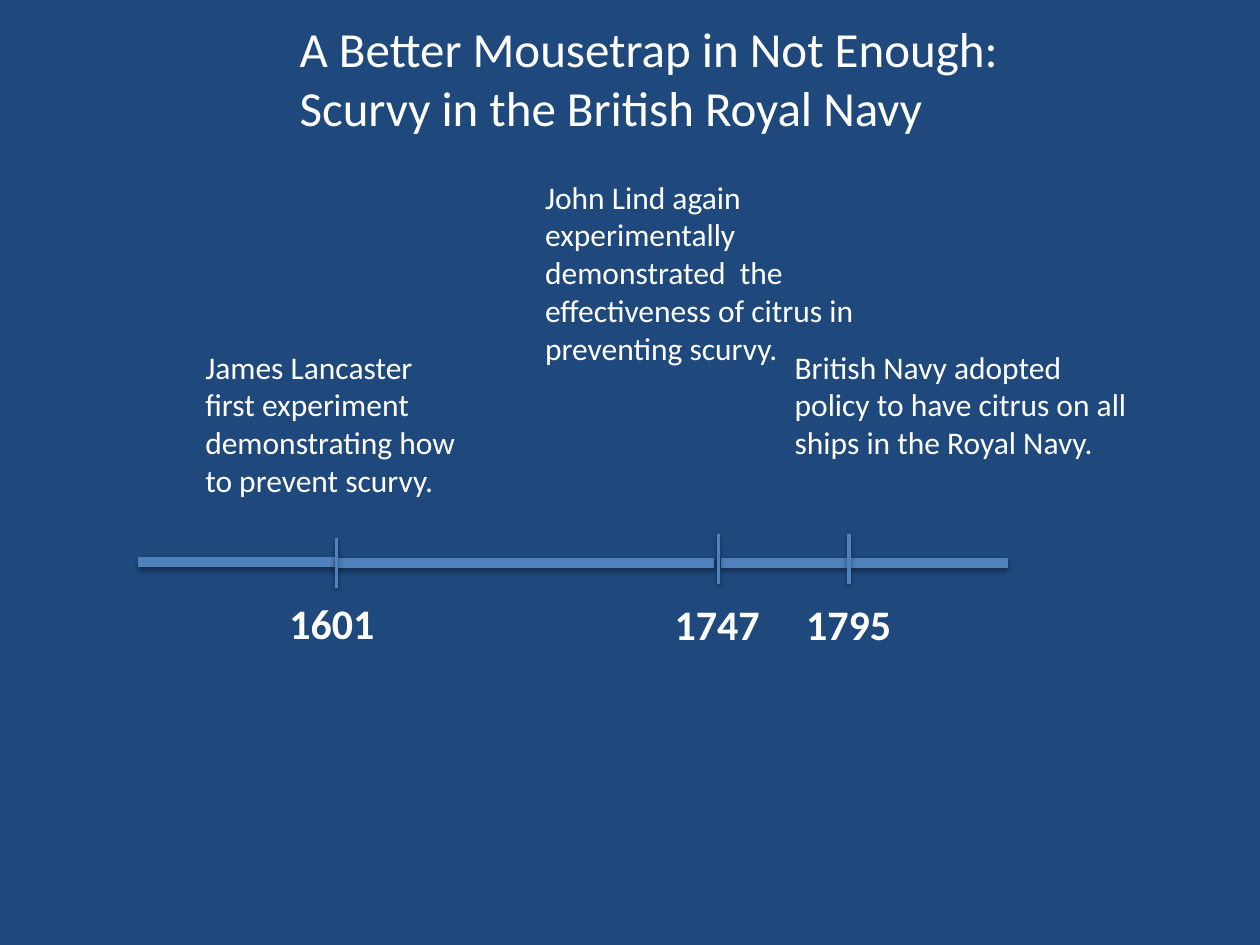
from dataclasses import dataclass

from lxml.etree import SubElement
from pptx import Presentation
from pptx.dml.color import RGBColor
from pptx.enum.shapes import MSO_CONNECTOR
from pptx.enum.text import MSO_ANCHOR, MSO_AUTO_SIZE, PP_ALIGN
from pptx.oxml.ns import qn
from pptx.shapes.base import BaseShape
from pptx.slide import Slide
from pptx.util import Cm, Pt


@dataclass(frozen=True)
class Theme:
    background: RGBColor = RGBColor(0x1F, 0x49, 0x7D)
    axis: RGBColor = RGBColor(0x4F, 0x81, 0xBD)
    text: RGBColor = RGBColor(0xFF, 0xFF, 0xFF)
    font: str = "Calibri"
    title_size: Pt = Pt(28)
    event_size: Pt = Pt(18)
    year_size: Pt = Pt(24)
    axis_width: Pt = Pt(6)
    tick_width: Pt = Pt(2)


@dataclass(frozen=True)
class Area:
    """A rectangle in centimetres."""
    left: float
    top: float
    width: float
    height: float


@dataclass(frozen=True)
class Event:
    year: str
    description: str
    tick_x: float
    tick_top: float
    description_area: Area
    year_area: Area


THEME = Theme()
TITLE = "A Better Mousetrap in Not Enough:\nScurvy in the British Royal Navy"
TITLE_AREA = Area(5.79, 0.25, 14.78, 2.64)
TICK_HEIGHT = 1.0

# Start x, end x and height of each piece of the time axis
AXIS_SEGMENTS = [
    (2.79, 6.78, 11.33),
    (6.78, 14.4, 11.35),
    (14.53, 17.07, 11.35),
    (17.12, 20.32, 11.35),
]

EVENTS = [
    Event("1601",
          "James Lancaster first experiment demonstrating how to prevent scurvy.",
          6.78, 10.85, Area(3.89, 6.88, 5.64, 3.33), Area(5.23, 11.91, 2.92, 2.31)),
    Event("1747",
          "John Lind again experimentally  demonstrated  the effectiveness of "
          "citrus in preventing scurvy.",
          14.48, 10.77, Area(10.74, 3.45, 7.44, 4.11), Area(13.0, 11.94, 2.92, 1.27)),
    Event("1795",
          "British Navy adopted policy to have citrus on all ships in the Royal Navy.",
          17.11, 10.77, Area(15.77, 6.88, 7.44, 2.57), Area(15.65, 11.94, 2.92, 1.27)),
]


def add_line(page: Slide, start: tuple[float, float], end: tuple[float, float],
             width: Pt) -> None:
    """Draw an axis-coloured line with a soft shadow below it."""
    line = page.shapes.add_connector(
        MSO_CONNECTOR.STRAIGHT, *(Cm(value) for value in (*start, *end)))
    line.line.color.rgb = THEME.axis
    line.line.width = width
    effects = SubElement(line.element.spPr, qn("a:effectLst"))
    shadow = SubElement(effects, qn("a:outerShdw"), blurRad="40000", dist="20000",
                        dir="5400000", rotWithShape="0")
    color = SubElement(shadow, qn("a:srgbClr"), val="000000")
    SubElement(color, qn("a:alpha"), val="38000")


def fill_text(box: BaseShape, text: str, size: Pt, bold: bool = False,
              alignment: PP_ALIGN = PP_ALIGN.LEFT) -> None:
    frame = box.text_frame
    frame.text = text
    frame_format = {
        "word_wrap": True, "auto_size": MSO_AUTO_SIZE.NONE,
        "vertical_anchor": MSO_ANCHOR.TOP,
        "margin_left": Cm(0.25), "margin_right": Cm(0.25),
        "margin_top": Cm(0.13), "margin_bottom": Cm(0.13),
    }
    for name, value in frame_format.items():
        setattr(frame, name, value)
    font_format = {"name": THEME.font, "size": size, "bold": bold}
    for para in frame.paragraphs:
        para.alignment = alignment
        for span in para.runs:
            for name, value in font_format.items():
                setattr(span.font, name, value)
            span.font.color.rgb = THEME.text


def add_text(page: Slide, area: Area, text: str, size: Pt, bold: bool = False,
             alignment: PP_ALIGN = PP_ALIGN.LEFT) -> None:
    box = page.shapes.add_textbox(
        Cm(area.left), Cm(area.top), Cm(area.width), Cm(area.height))
    fill_text(box, text, size, bold, alignment)


def set_title(page: Slide) -> None:
    title = page.shapes.title
    for name in ("left", "top", "width", "height"):
        setattr(title, name, Cm(getattr(TITLE_AREA, name)))
    fill_text(title, TITLE, THEME.title_size)


def add_event(page: Slide, event: Event) -> None:
    add_line(page, (event.tick_x, event.tick_top),
             (event.tick_x, event.tick_top + TICK_HEIGHT), THEME.tick_width)
    add_text(page, event.description_area, event.description, THEME.event_size)
    add_text(page, event.year_area, event.year, THEME.year_size,
             bold=True, alignment=PP_ALIGN.CENTER)


def main() -> None:
    deck = Presentation()
    deck.slide_width, deck.slide_height = Cm(25.4), Cm(19.05)
    page = deck.slides.add_slide(deck.slide_layouts.get_by_name("Title Only"))
    page.background.fill.solid()
    page.background.fill.fore_color.rgb = THEME.background

    set_title(page)
    for start_x, end_x, y in AXIS_SEGMENTS:
        add_line(page, (start_x, y), (end_x, y), THEME.axis_width)
    for event in EVENTS:
        add_event(page, event)
    deck.save("out.pptx")


if __name__ == "__main__":
    main()
